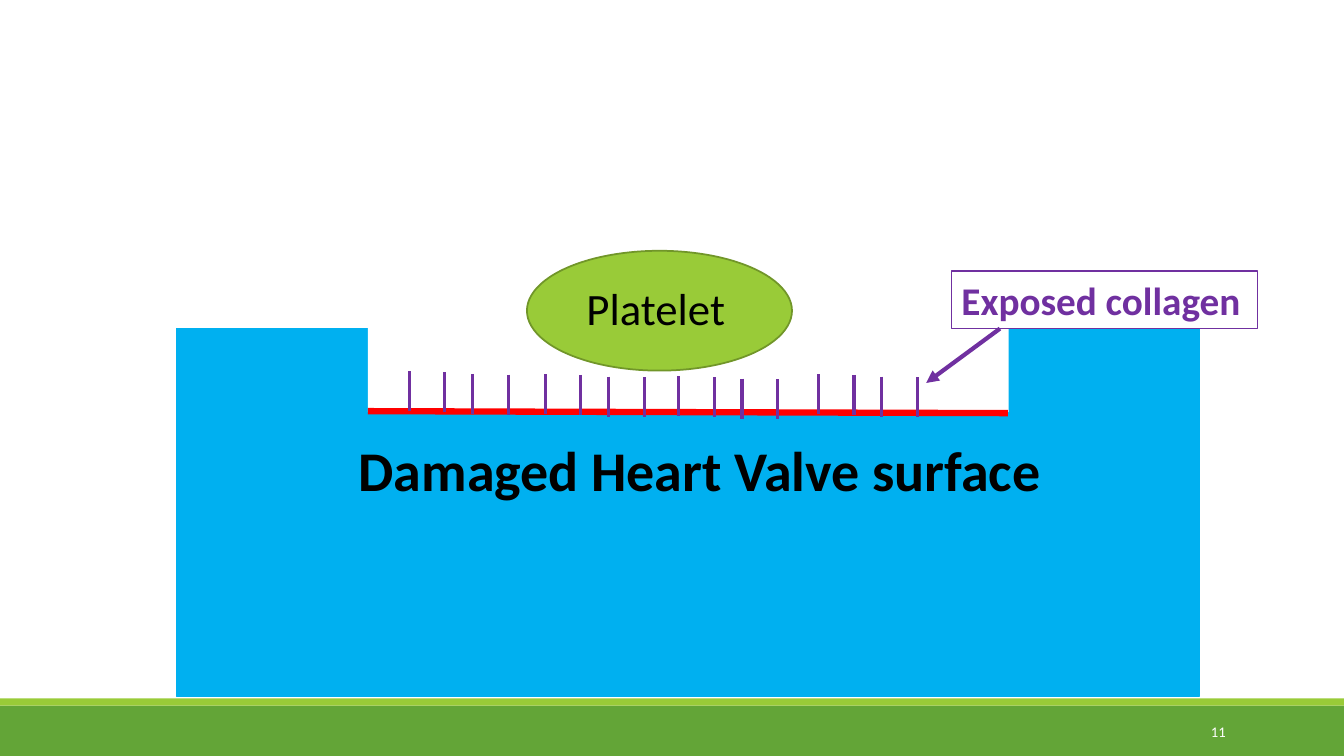
from typing import NamedTuple, Optional

from lxml.etree import SubElement
from pptx import Presentation
from pptx.dml.color import RGBColor as Rgb
from pptx.enum.shapes import MSO_CONNECTOR as Link, MSO_SHAPE as Form
from pptx.enum.text import MSO_ANCHOR as Anchor, PP_ALIGN as Align
from pptx.oxml.ns import qn
from pptx.util import Cm, Pt

HUES = {
    "white": "FFFFFF",
    "black": "000000",
    "green": "63A537",
    "lime": "99CB38",
    "olive": "719629",
    "blue": "00B0F0",
    "red": "FF0000",
    "purple": "7030A0",
}
WIDE, HIGH = 33.87, 19.05


class Box(NamedTuple):
    left: float
    top: float
    width: float
    height: float
    fill: Optional[str] = None
    edge: Optional[str] = None
    thick: float = 1.25
    form: Form = Form.RECTANGLE


class Line(NamedTuple):
    x: float
    y: float
    to_x: float
    to_y: float
    hue: str
    thick: float
    arrow: bool = False


class Note(NamedTuple):
    left: float
    top: float
    width: float
    height: float
    text: str
    size: float
    hue: str
    bold: bool = False
    align: Align = Align.LEFT
    anchor: Anchor = Anchor.TOP


def tint(hue: str) -> Rgb:
    return Rgb.from_string(HUES[hue])


def draw_box(slide, box: Box) -> None:
    shape = slide.shapes.add_shape(box.form, *map(Cm, box[:4]))
    shape.shadow.inherit = False
    if box.fill:
        shape.fill.solid()
        shape.fill.fore_color.rgb = tint(box.fill)
    else:
        shape.fill.background()
    if box.edge:
        shape.line.color.rgb = tint(box.edge)
        shape.line.width = Pt(box.thick)
    else:
        shape.line.fill.background()


def draw_line(slide, line: Line) -> None:
    link = slide.shapes.add_connector(Link.STRAIGHT, *map(Cm, line[:4]))
    link.line.color.rgb = tint(line.hue)
    link.line.width = Pt(line.thick)
    if line.arrow:
        SubElement(link.line._get_or_add_ln(), qn("a:tailEnd"), type="triangle")
    SubElement(link._element.spPr, qn("a:effectLst"))


def draw_note(slide, note: Note) -> None:
    frame = slide.shapes.add_textbox(*map(Cm, note[:4])).text_frame
    frame.word_wrap = True
    frame.vertical_anchor = note.anchor
    para = frame.paragraphs[0]
    para.text = note.text
    para.alignment = note.align
    font = para.font
    font.name = "Calibri"
    font.size = Pt(note.size)
    font.bold = note.bold
    font.color.rgb = tint(note.hue)


BOXES = [
    Box(0, 17.78, WIDE, 1.27, "green"),
    Box(0, 17.6, WIDE, 0.18, "lime"),
    Box(4.45, 8.28, 25.76, 9.27, "blue", "blue"),
    Box(9.27, 8.24, 16.15, 2.15, "white"),
    Box(23.98, 6.83, 7.7, 1.45, None, "purple", 0.75),
    Box(13.28, 6.32, 6.68, 3.02, "lime", "olive", form=Form.OVAL),
]

TUFTS = [(10.31, 9.36), (13.74, 9.43), (17.1, 9.48), (20.62, 9.43)]
STEPS = [(0, 0), (0.9, 0.02), (1.6, 0.06), (2.5, 0.08)]
FIBRE = 1.01

LINES = [
    Line(9.27, 10.36, 25.4, 10.41, "red", 4.5),
    *(
        Line(x + dx, y + dy, x + dx, y + dy + FIBRE, "purple", 2.25)
        for x, y in TUFTS
        for dx, dy in STEPS
    ),
    Line(25.2, 8.28, 23.34, 9.65, "purple", 3, True),
]

NOTES = [
    Note(23.98, 6.83, 7.7, 1.45, "Exposed collagen", 28, "purple", True),
    Note(8.79, 10.85, 18.29, 1.96, "Damaged Heart Valve surface", 40, "black", True),
    Note(14.53, 6.96, 5.54, 1.63, "Platelet", 32, "black"),
    Note(27.51, 17.93, 3.63, 1.02, "11", 10.5, "white",
         align=Align.RIGHT, anchor=Anchor.MIDDLE),
]


def main() -> None:
    deck = Presentation()
    deck.slide_width, deck.slide_height = Cm(WIDE), Cm(HIGH)
    slide = deck.slides.add_slide(deck.slide_layouts[6])
    for box in BOXES:
        draw_box(slide, box)
    for line in LINES:
        draw_line(slide, line)
    for note in NOTES:
        draw_note(slide, note)
    deck.save("out.pptx")


if __name__ == "__main__":
    main()
